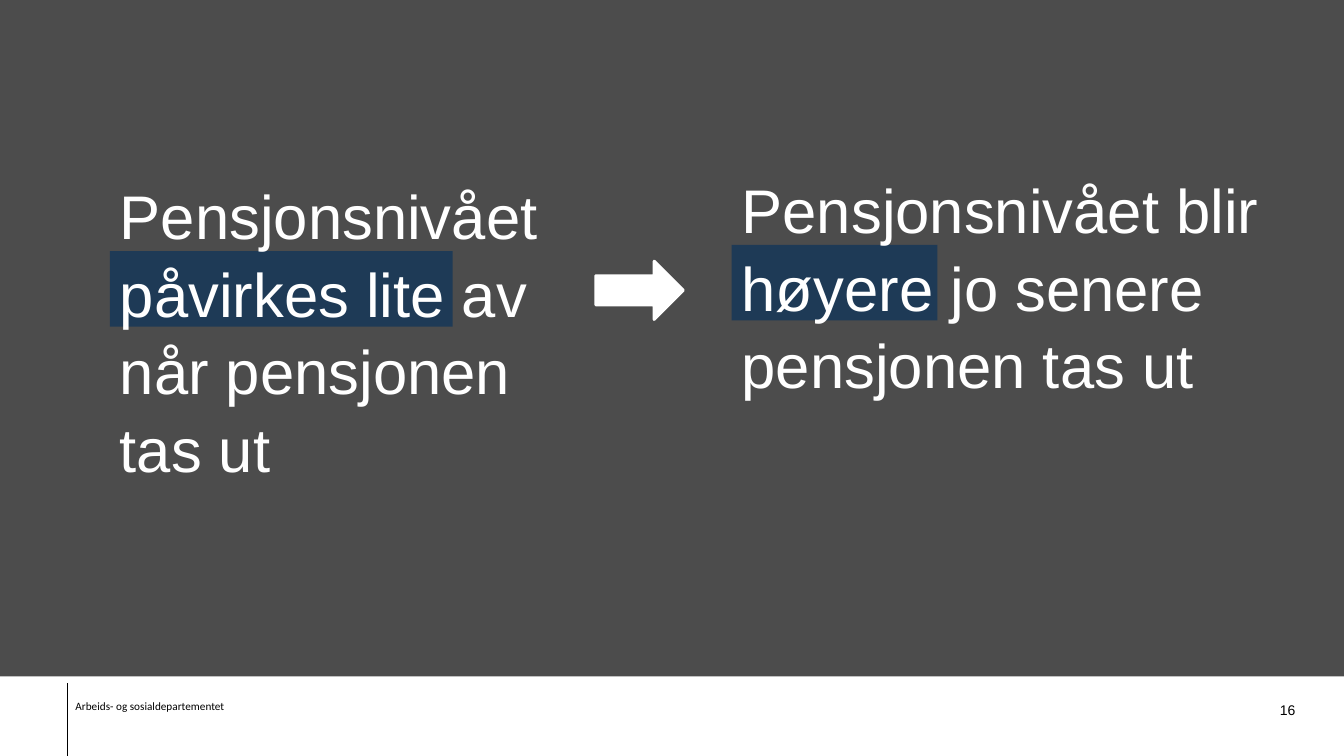
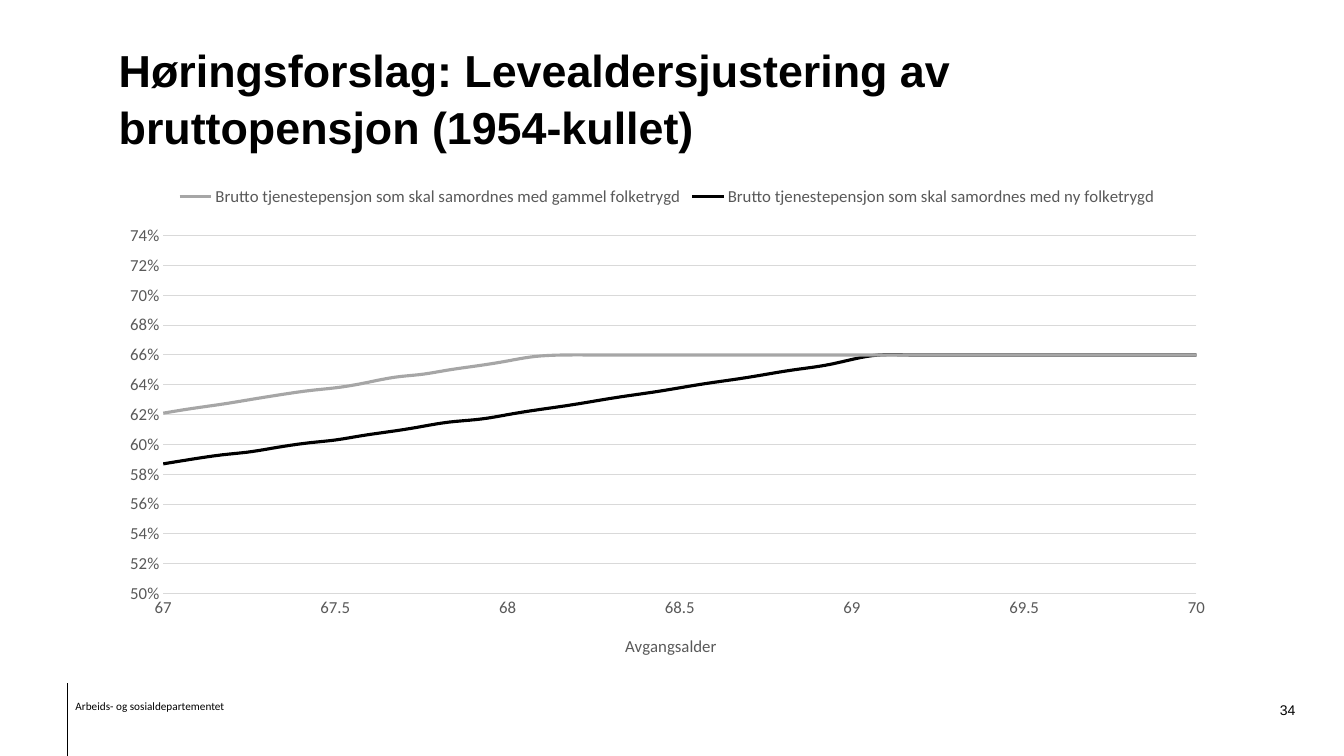
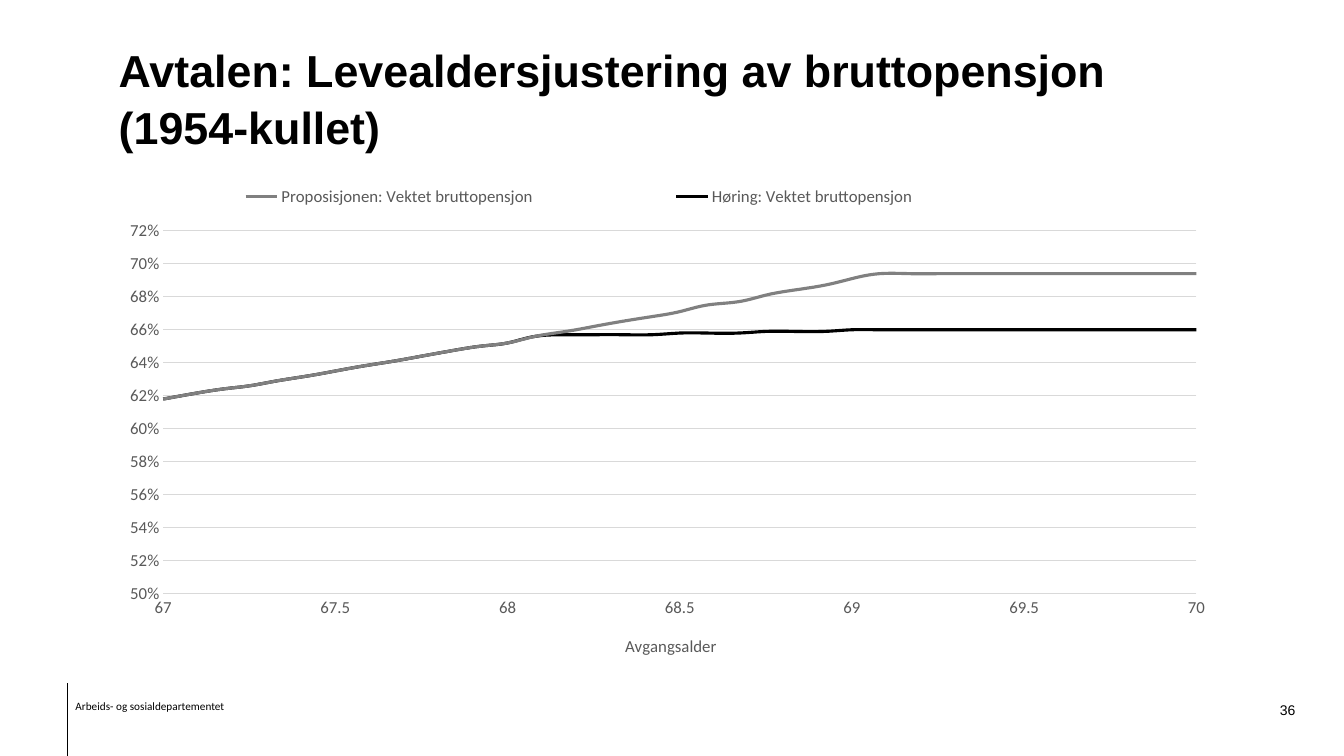
from dataclasses import dataclass

from lxml.etree import SubElement
from pptx import Presentation
from pptx.chart.data import XyChartData
from pptx.dml.color import RGBColor
from pptx.enum.chart import XL_CHART_TYPE, XL_LEGEND_POSITION, XL_MARKER_STYLE, XL_TICK_MARK
from pptx.enum.shapes import MSO_CONNECTOR, MSO_SHAPE
from pptx.enum.text import MSO_ANCHOR, PP_ALIGN
from pptx.oxml import parse_xml
from pptx.oxml.ns import nsdecls, qn
from pptx.util import Emu, Pt


@dataclass(frozen=True)
class Theme:
    black: str = "000000"
    white: str = "FFFFFF"
    navy: str = "002E5E"
    light: str = "A6A6A6"
    mid: str = "808080"
    grid: str = "D9D9D9"
    label: str = "595959"
    font: str = "Arial"
    small_font: str = "Calibri"
    statement: int = 44
    title: int = 32
    chart: int = 12
    number: int = 10
    footer: int = 8
    leading: float = 1.05


@dataclass(frozen=True)
class Box:
    x: int
    y: int
    w: int
    h: int

    def emu(self) -> tuple[Emu, Emu, Emu, Emu]:
        return px(self.x), px(self.y), px(self.w), px(self.h)


@dataclass(frozen=True)
class Line:
    name: str
    color: str
    per_mille: list[int]  # the last value holds until the final month


@dataclass(frozen=True)
class ChartSlide:
    number: int
    title: str
    top: float  # highest value on the axis
    plot_y: int
    lines: list[Line]
    legend_width: int = 0  # 0 leaves the width automatic


@dataclass(frozen=True)
class Statement:
    text: str
    box: Box
    highlight: Box


T = Theme()
MONTHS = 37
CHART = Box(107, 174, 1110, 495)
PLOT_X, PLOT_W, PLOT_BOTTOM = 162, 1025, 589


def px(n: int) -> Emu:
    """100 px make one inch."""
    return Emu(n * 9144)


def rgb(color: str) -> RGBColor:
    return RGBColor.from_string(color)


def set_font(font, size: int, color: str, name: str, bold: bool = False) -> None:
    font.size, font.name, font.bold = Pt(size), name, bold
    font.color.rgb = rgb(color)


def add_text(slide, box: Box, text: str, *, size: int, color: str = T.black,
             font: str = T.font, bold: bool = False, align=PP_ALIGN.LEFT,
             anchor=MSO_ANCHOR.TOP, leading: float = 1.0, right: int = 10) -> None:
    tf = slide.shapes.add_textbox(*box.emu()).text_frame
    tf.word_wrap = True
    tf.vertical_anchor = anchor
    tf.margin_right = px(right)
    p = tf.paragraphs[0]
    p.alignment, p.line_spacing = align, leading
    r = p.add_run()
    r.text = text
    set_font(r.font, size, color, font, bold)


def add_block(slide, box: Box, color: str, *, kind=MSO_SHAPE.RECTANGLE,
              opacity: int = 100, outline: float = 0) -> None:
    sp = slide.shapes.add_shape(kind, *box.emu())
    sp.shadow.inherit = False
    sp.fill.solid()
    sp.fill.fore_color.rgb = rgb(color)
    if opacity < 100:
        clr = sp.fill._xPr.find(".//" + qn("a:srgbClr"))
        SubElement(clr, qn("a:alpha")).set("val", str(opacity * 1000))
    if outline:
        sp.line.color.rgb = rgb(color)
        sp.line.width = Pt(outline)
    else:
        sp.line.fill.background()


def new_slide(prs):
    """Blank slide with the department footer."""
    slide = prs.slides.add_slide(prs.slide_layouts[6])
    add_text(slide, Box(65, 689, 283, 24), "Arbeids- og sosialdepartementet",
             size=T.footer, font=T.small_font)
    rule = slide.shapes.add_connector(MSO_CONNECTOR.STRAIGHT, px(67), px(678), px(67), px(750))
    rule.line.color.rgb = rgb(T.black)
    rule.line.width = Pt(0.75)
    SubElement(rule._element.spPr, qn("a:effectLst"))
    return slide


def add_number(slide, number: int) -> None:
    add_text(slide, Box(1230, 691, 55, 24), str(number), size=T.number,
             align=PP_ALIGN.RIGHT, right=0)


def chart_layout(x: int, y: int, w: int = 0, h: int = 0, inner: bool = False):
    """Manual layout for a chart part, from slide px to shares of the chart."""
    shares = {"x": (x - CHART.x) / CHART.w, "y": (y - CHART.y) / CHART.h}
    if w:
        shares |= {"w": w / CHART.w, "h": h / CHART.h}
    target = '<c:layoutTarget val="inner"/>' if inner else ""
    modes = '<c:xMode val="edge"/><c:yMode val="edge"/>'
    values = "".join(f'<c:{k} val="{v:.4f}"/>' for k, v in shares.items())
    return parse_xml(f'<c:layout {nsdecls("c")}><c:manualLayout>{target}{modes}{values}'
                     "</c:manualLayout></c:layout>")


def place(element, layout, after: str = "") -> None:
    """Put the layout first in a chart element, or after a named child."""
    for old in element.findall(qn("c:layout")):
        element.remove(old)
    at = element.index(element.find(qn(after))) + 1 if after else 0
    element.insert(at, layout)


def style_axis(axis, low: float, high: float, step: float, number_format: str) -> None:
    axis.minimum_scale, axis.maximum_scale, axis.major_unit = low, high, step
    axis.major_tick_mark = axis.minor_tick_mark = XL_TICK_MARK.NONE
    labels = axis.tick_labels
    labels.number_format, labels.number_format_is_linked = number_format, False
    set_font(labels.font, T.chart, T.label, T.small_font)


def add_line_chart(slide, item: ChartSlide) -> None:
    data = XyChartData()
    for line in item.lines:
        series = data.add_series(line.name)
        plateau = [line.per_mille[-1]] * (MONTHS - len(line.per_mille))
        for month, value in enumerate(line.per_mille + plateau):
            series.add_data_point(round(67 + month / 12, 2), value / 1000)
    chart = slide.shapes.add_chart(XL_CHART_TYPE.XY_SCATTER_SMOOTH_NO_MARKERS,
                                   *CHART.emu(), data).chart
    chart.has_title = False
    set_font(chart.font, T.chart, T.black, T.small_font)

    # Axes
    ages, shares = chart.category_axis, chart.value_axis
    style_axis(ages, 67, 70, 0.5, "General")
    style_axis(shares, 0.5, item.top, 0.02, "0%")
    ages.has_major_gridlines = False
    shares.has_major_gridlines = True
    shares.format.line.fill.background()
    for line in (ages.format.line, shares.major_gridlines.format.line):
        line.color.rgb = rgb(T.grid)
        line.width = Pt(0.75)
    ages.has_title = True
    p = ages.axis_title.text_frame.paragraphs[0]
    r = p.add_run()
    r.text = "Avgangsalder"
    set_font(r.font, T.chart, T.label, T.small_font)
    place(ages.axis_title._element, chart_layout(617, 627), after="c:tx")

    # Lines
    plot = chart.plots[0]
    plot.vary_by_categories = False
    for series, line in zip(plot.series, item.lines):
        series.marker.style = XL_MARKER_STYLE.NONE
        series.format.line.color.rgb = rgb(line.color)
        series.format.line.width = Pt(2.25)
        series._element.find(qn("c:smooth")).set("val", "1")
    place(chart._chartSpace.chart.plotArea,
          chart_layout(PLOT_X, item.plot_y, PLOT_W, PLOT_BOTTOM - item.plot_y, inner=True))

    # Legend
    chart.has_legend = True
    legend = chart.legend
    legend.position = XL_LEGEND_POSITION.TOP
    legend.include_in_layout = False
    set_font(legend.font, T.chart, T.label, T.small_font)
    if item.legend_width:
        place(legend._element, chart_layout(CHART.x, 182, item.legend_width, 26),
              after="c:legendPos")


def add_chart_slide(prs, item: ChartSlide) -> None:
    slide = new_slide(prs)
    add_text(slide, Box(108, 32, 1110, 125), item.title, size=T.title, bold=True,
             anchor=MSO_ANCHOR.BOTTOM, leading=T.leading)
    add_number(slide, item.number)
    add_line_chart(slide, item)


def add_statement_slide(prs, number: int, statements: list[Statement]) -> None:
    slide = new_slide(prs)
    add_block(slide, Box(0, 0, 1334, 671), T.black, opacity=70)
    for s in statements:
        add_block(slide, s.highlight, T.navy, opacity=60)
        add_text(slide, s.box, s.text, size=T.statement, color=T.white, leading=T.leading)
    add_number(slide, number)
    add_block(slide, Box(591, 259, 87, 58), T.white, kind=MSO_SHAPE.RIGHT_ARROW, outline=2)


STATEMENTS = [
    Statement("Pensjonsnivået påvirkes lite av når pensjonen tas ut",
              Box(109, 168, 491, 311), Box(109, 249, 340, 75)),
    Statement("Pensjonsnivået blir høyere jo senere pensjonen tas ut",
              Box(726, 162, 558, 311), Box(726, 243, 204, 75)),
]

# Both weighted lines share their first 14 months
WEIGHTED = [618, 621, 624, 626, 629, 632, 635, 638, 641, 644, 647, 650, 652, 656]

CHARTS = [
    ChartSlide(34, "Høringsforslag: Levealdersjustering av bruttopensjon (1954-kullet)", 0.75, 219, [
        Line("Brutto tjenestepensjon som skal samordnes med gammel folketrygd", T.light,
             [621, 624, 627, 630, 633, 636, 638, 641, 645, 647, 650, 653, 656, 659, 660]),
        Line("Brutto tjenestepensjon som skal samordnes med ny folketrygd", T.black,
             [587, 590, 593, 595, 598, 601, 603, 606, 609, 612, 615, 617, 620,
              623, 626, 629, 632, 635, 638, 641, 644, 647, 650, 653, 657, 660]),
    ]),
    ChartSlide(36, "Avtalen: Levealdersjustering av bruttopensjon (1954-kullet)", 0.72, 229, [
        Line("Proposisjonen: Vektet bruttopensjon", T.mid,
             WEIGHTED + [659, 662, 665, 668, 671, 675, 677, 681, 684, 687, 691, 694]),
        Line("Høring: Vektet bruttopensjon", T.black,
             WEIGHTED + [657] * 4 + [658] * 3 + [659] * 3 + [660]),
    ], legend_width=935),
]


def main() -> None:
    prs = Presentation()
    prs.slide_width, prs.slide_height = Emu(12192000), px(750)
    add_statement_slide(prs, 16, STATEMENTS)
    for item in CHARTS:
        add_chart_slide(prs, item)
    prs.save("out.pptx")


if __name__ == "__main__":
    main()
